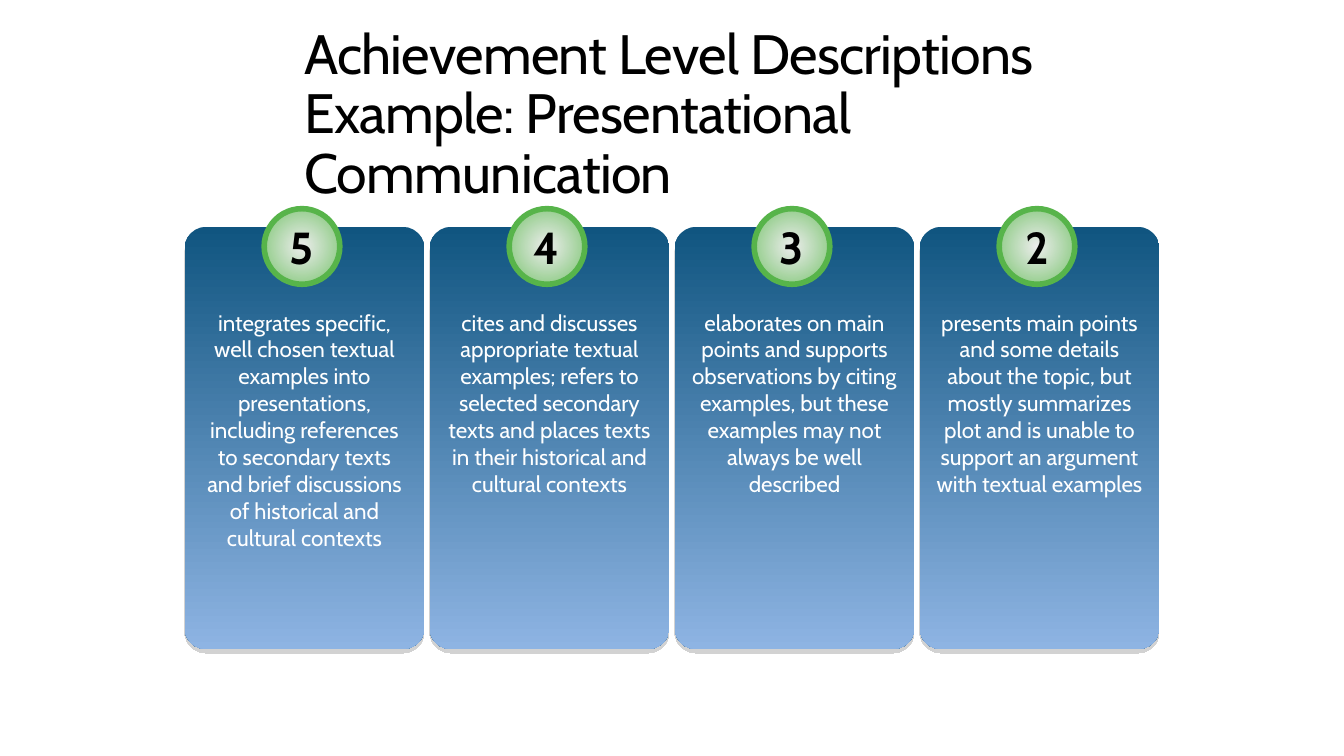
import pptx
import pptx.util
import pptx.dml.color
import pptx.enum.shapes
import pptx.enum.text
import pptx.oxml
import pptx.oxml.ns

Inches = pptx.util.Inches
Pt = pptx.util.Pt
RGBColor = pptx.dml.color.RGBColor
Shapes = pptx.enum.shapes.MSO_SHAPE
Align = pptx.enum.text.PP_ALIGN
Anchor = pptx.enum.text.MSO_ANCHOR
qn = pptx.oxml.ns.qn

BLACK = RGBColor(0x00, 0x00, 0x00)
WHITE = RGBColor(0xFF, 0xFF, 0xFF)
DEEP_BLUE = RGBColor(0x10, 0x55, 0x80)
LIGHT_BLUE = RGBColor(0x8E, 0xB4, 0xE3)
PALE_GRAY = RGBColor(0xED, 0xED, 0xED)
SOFT_GREEN = RGBColor(0x74, 0xC2, 0x6A)
RING_GREEN = RGBColor(0x57, 0xB4, 0x4A)

NAMESPACE = pptx.oxml.ns.nsdecls("a")
CARD_SHADOW = (
    f'<a:outerShdw {NAMESPACE} blurRad="0" dist="{Pt(2.8)}" dir="5400000" '
    'algn="ctr" rotWithShape="0"><a:srgbClr val="808080">'
    '<a:alpha val="35000"/></a:srgbClr></a:outerShdw>'
)
CENTER_PATH = (
    f'<a:path {NAMESPACE} path="circle">'
    '<a:fillToRect l="50000" t="50000" r="50000" b="50000"/></a:path>'
)

TITLE_LINES = (
    "Achievement Level Descriptions",
    "Example: Presentational Communication",
)
LEVELS = (
    ("5", "integrates specific, well chosen textual examples into presentations, "
          "including references to secondary texts and brief discussions of "
          "historical and cultural contexts"),
    ("4", "cites and discusses appropriate textual examples; refers to selected "
          "secondary texts and places texts in their historical and cultural contexts"),
    ("3", "elaborates on main points and supports observations by citing examples, "
          "but these examples may not always be well described"),
    ("2", "presents main points and some details about the topic, but mostly "
          "summarizes plot and is unable to support an argument with textual examples"),
)
FIRST_CARD_LEFT = 1.83
CARD_PITCH = 2.43
BADGE_OFFSET = 0.79


class LevelSlide:
    """Draws the title, cards and badges of an achievement level slide."""

    def __init__(self, slide, font_name="Cabin"):
        self.slide = slide
        self.font_name = font_name

    def style(self, paragraph, size, color, bold=False):
        paragraph.font.name = self.font_name
        paragraph.font.size = Pt(size)
        paragraph.font.color.rgb = color
        paragraph.font.bold = bold

    def title(self, lines, left, top, width, height):
        heading = self.slide.shapes.add_textbox(
            Inches(left), Inches(top), Inches(width), Inches(height))
        frame = heading.text_frame
        frame.word_wrap = True
        frame.vertical_anchor = Anchor.MIDDLE
        paragraph = frame.paragraphs[0]
        paragraph.line_spacing = 0.9
        self.style(paragraph, 39.6, BLACK)
        for index, line in enumerate(lines):
            if index:
                paragraph.add_line_break()
            run = paragraph.add_run()
            run.text = line
            run._r.get_or_add_rPr().set("spc", "-50")

    def gradient_shape(self, kind, left, top, width, height, colors):
        shape = self.slide.shapes.add_shape(
            kind, Inches(left), Inches(top), Inches(width), Inches(height))
        shape.shadow.inherit = False
        shape.fill.gradient()
        shape.fill.gradient_angle = 270
        for stop, color in zip(shape.fill.gradient_stops, colors):
            stop.color.rgb = color
        return shape

    def label(self, shape, text, size, color, bold=False):
        shape.text_frame.word_wrap = True
        paragraph = shape.text_frame.paragraphs[0]
        paragraph.text = text
        paragraph.alignment = Align.CENTER
        self.style(paragraph, size, color, bold)

    def card(self, description, left):
        card = self.gradient_shape(
            Shapes.ROUNDED_RECTANGLE, left, 2.25, 2.38, 4.19, (DEEP_BLUE, LIGHT_BLUE))
        card.adjustments[0] = 0.09
        card.line.fill.background()
        effects = card._element.spPr.find(qn("a:effectLst"))
        effects.append(pptx.oxml.parse_xml(CARD_SHADOW))
        card.text_frame.margin_top = Inches(0.75)
        card.text_frame.vertical_anchor = Anchor.TOP
        self.label(card, description, 16, WHITE)

    def badge(self, level, left):
        badge = self.gradient_shape(
            Shapes.OVAL, left, 2.07, 0.75, 0.75, (PALE_GRAY, SOFT_GREEN))
        gradient = badge._element.spPr.find(qn("a:gradFill"))
        gradient.replace(gradient.find(qn("a:lin")), pptx.oxml.parse_xml(CENTER_PATH))
        badge.line.color.rgb = RING_GREEN
        badge.line.width = Pt(4)
        badge.text_frame.vertical_anchor = Anchor.MIDDLE
        self.label(badge, level, 32, BLACK, bold=True)


def main():
    deck = pptx.Presentation()
    deck.slide_width = Inches(13.33)
    deck.slide_height = Inches(7.5)
    page = LevelSlide(deck.slides.add_slide(deck.slide_layouts[6]))
    page.title(TITLE_LINES, 2.92, 0.8, 8.75, 0.7)
    for column, (level, description) in enumerate(LEVELS):
        left = FIRST_CARD_LEFT + column * CARD_PITCH
        page.card(description, left)
        page.badge(level, left + BADGE_OFFSET)
    deck.save("out.pptx")


if __name__ == "__main__":
    main()
